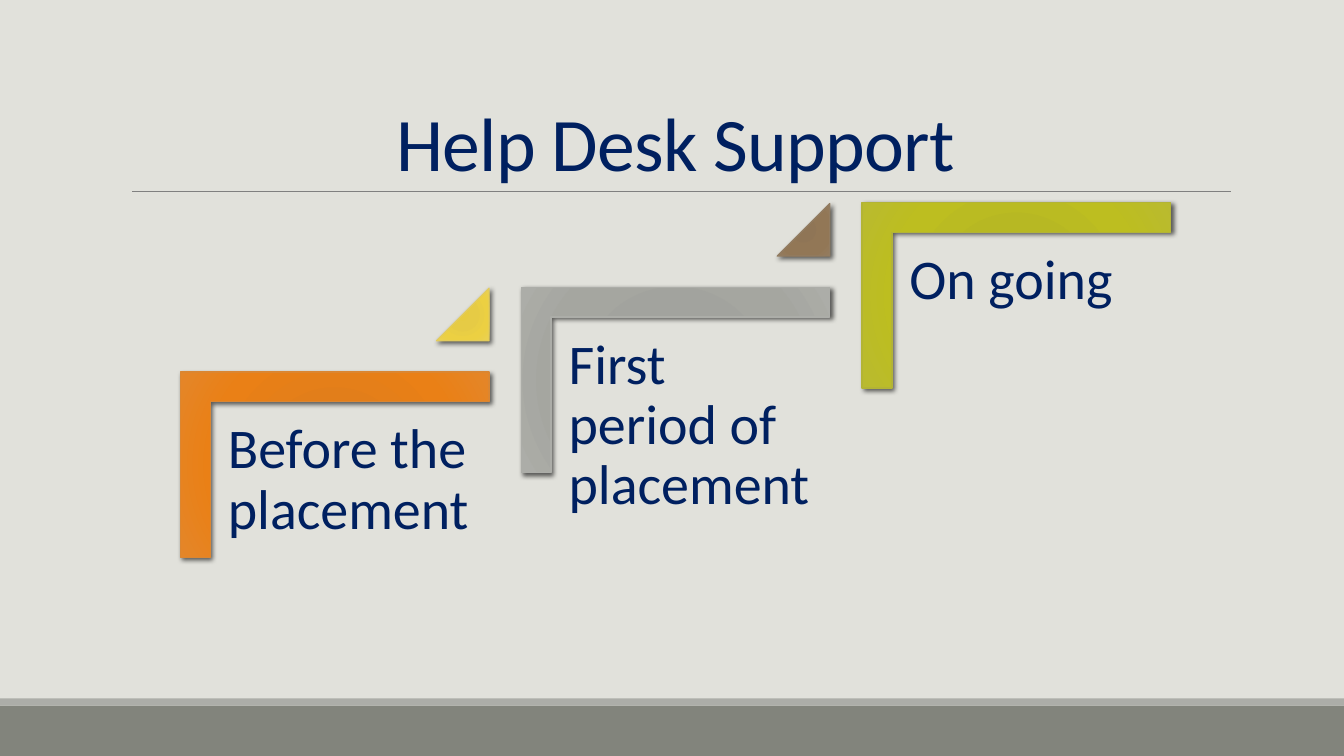
"""Build the Help Desk Support slide: three rising steps towards ongoing support."""
from lxml import etree
from pptx import Presentation
from pptx.dml.color import RGBColor
from pptx.enum.shapes import MSO_CONNECTOR, MSO_SHAPE
from pptx.enum.text import MSO_ANCHOR, PP_ALIGN
from pptx.oxml.ns import qn
from pptx.util import Inches, Pt


def paint(color_format, hex_color):
    color_format.rgb = RGBColor.from_string(hex_color)


def add_glossy(kind, box, adjustments, stops, outline):
    shape = slide.shapes.add_shape(kind, *map(Inches, box))
    for index, value in enumerate(adjustments):
        shape.adjustments[index] = value
    paint(shape.line.color, outline)
    shape.line.width = Pt(1)
    shape.fill.gradient()
    gradient = shape._element.spPr.find(qn("a:gradFill"))
    for child in list(gradient):
        gradient.remove(child)
    stop_list = etree.SubElement(gradient, qn("a:gsLst"))
    for position, color in zip((0, 34, 70, 100), stops):
        stop = etree.SubElement(stop_list, qn("a:gs"), pos=str(position * 1000))
        etree.SubElement(stop, qn("a:srgbClr"), val=color)
    circle = etree.SubElement(gradient, qn("a:path"), path="circle")
    etree.SubElement(circle, qn("a:fillToRect"), dict.fromkeys("ltrb", "100000"))
    shape.shadow.inherit = False
    effects = shape._element.spPr.find(qn("a:effectLst"))
    shadow = etree.SubElement(effects, qn("a:outerShdw"), blurRad=str(Pt(3.5)),
                              dist=str(Pt(2)), dir="2700000", algn="br", rotWithShape="0")
    shade = etree.SubElement(shadow, qn("a:srgbClr"), val="000000")
    etree.SubElement(shade, qn("a:alpha"), val="60000")
    return shape


NAVY = "002060"
prs = Presentation()
prs.slide_width, prs.slide_height = Inches(13.33), Inches(7.5)
slide = prs.slides.add_slide(prs.slide_layouts[6])
slide.background.fill.solid()
paint(slide.background.fill.fore_color, "E1E1DB")

for top, height, color in ((7, 0.5, "82847C"), (6.93, 0.07, "ACADA8")):
    footer = slide.shapes.add_shape(MSO_SHAPE.RECTANGLE, 0, Inches(top),
                                    prs.slide_width, Inches(height))
    footer.shadow.inherit = False
    footer.fill.solid()
    paint(footer.fill.fore_color, color)
    footer.line.fill.background()

rule = slide.shapes.add_connector(MSO_CONNECTOR.STRAIGHT, Inches(1.31), Inches(1.9),
                                  Inches(12.21), Inches(1.9))
paint(rule.line.color, "808080")
rule.line.width = Pt(0.5)
etree.SubElement(rule._element.spPr, qn("a:effectLst"))

title = slide.shapes.add_textbox(Inches(1.2), Inches(0.31), Inches(11), Inches(1.59))
title.text_frame.word_wrap = True
title.text_frame.vertical_anchor = MSO_ANCHOR.BOTTOM
title.text_frame.text = "Help Desk Support"
heading = title.text_frame.paragraphs[0]
heading.alignment = PP_ALIGN.CENTER
heading.line_spacing = 0.85
heading.runs[0].font.size = Pt(54)
heading.runs[0].font.name = "Calibri"
paint(heading.runs[0].font.color, NAVY)
heading.runs[0]._r.get_or_add_rPr().set("spc", "-50")

steps = [
    ("Before the placement", ("E47D16", "E27E1A", "EA8016", "E48629"), "DB8631"),
    ("First period of placement", ("A1A29C", "A2A39E", "A5A6A0", "ACADA8"), "ACADA8"),
    ("On going", ("B8B920", "B7B823", "BDBE20", "B9BA2F"), "B3B435"),
]
risers = [
    (("E7CB41", "E6CB45", "ECD042", "EAD153"), "E3CC5A"),
    (("8F7454", "8F7556", "927756", "947C5F"), "927C61"),
]
for number, (stage, stops, outline) in enumerate(steps):
    across, rise = 3.38 * number, 0.84 * number
    bracket = add_glossy(MSO_SHAPE.CORNER, (2.4 + across, 3.08 - rise, 1.84, 3.06),
                         (0.161, 0.161), stops, outline)
    bracket.rotation = 90

    label = slide.shapes.add_textbox(Inches(2.09 + across), Inches(4 - rise),
                                     Inches(2.76), Inches(2.42))
    frame = label.text_frame
    frame.word_wrap = True
    frame.margin_left = frame.margin_right = Inches(0.17)
    frame.margin_top = frame.margin_bottom = Inches(0.17)
    frame.text = stage
    frame.paragraphs[0].line_spacing = 0.9
    wording = frame.paragraphs[0].runs[0].font
    wording.size = Pt(40)
    wording.name = "Calibri"
    paint(wording.color, NAVY)

    if number < len(risers):
        add_glossy(MSO_SHAPE.ISOSCELES_TRIANGLE, (4.33 + across, 2.86 - rise, 0.52, 0.52),
                   (1,), *risers[number])

prs.save("out.pptx")
